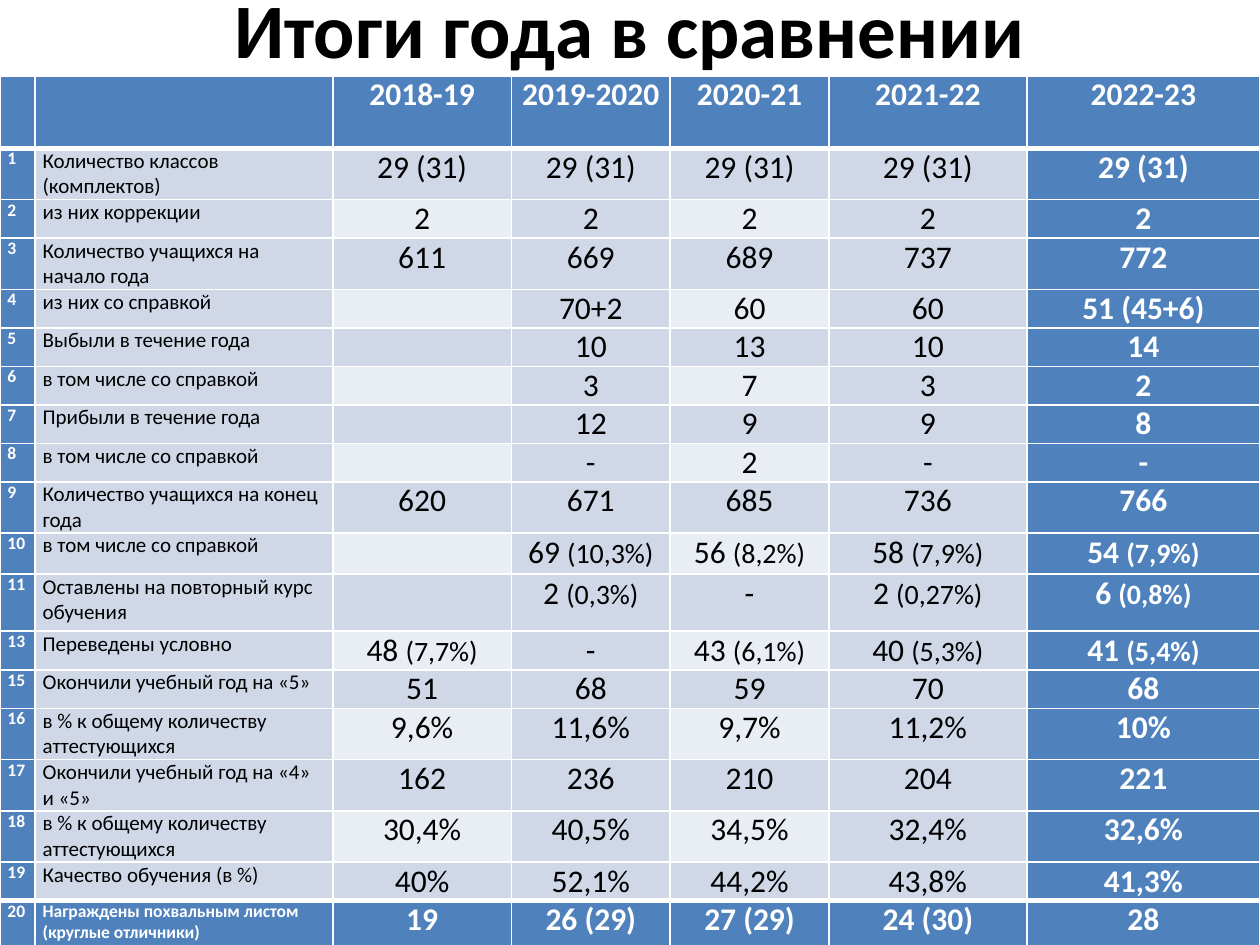
"""Build a slide with a table that compares school results over five years."""
from lxml import etree
from pptx import Presentation
from pptx.dml.color import RGBColor
from pptx.enum.text import MSO_ANCHOR, MSO_AUTO_SIZE, PP_ALIGN
from pptx.oxml.ns import qn
from pptx.util import Cm, Pt

CENTER = PP_ALIGN.CENTER
LEFT = PP_ALIGN.LEFT
MIDDLE = MSO_ANCHOR.MIDDLE
NO_AUTOFIT = MSO_AUTO_SIZE.NONE

FONT = "Calibri"
COLORS = {
    "black": "000000",
    "white": "FFFFFF",
    "accent": "4F81BD",
    "band": "D0D8E8",
    "light": "E9EDF4",
}
COLUMN_WIDTHS = [0.71, 6, 3.6, 3.2, 3.2, 3.99, 4.7]
TITLE = "Итоги года в сравнении"
HEADER_HEIGHT = 1.46
HEADER = ["", "", "2018-19", "2019-2020", "2020-21", "2021-22", "2022-23"]
RESULTS = [
    (0.99, ["1", "Количество классов (комплектов)"] + ["29 (31)"] * 5),
    (0.66, ["2", "из них коррекции"] + ["2"] * 5),
    (0.99, ["3", "Количество учащихся на начало года", "611", "669", "689", "737", "772"]),
    (0.74, ["4", "из них со справкой", "", "70+2", "60", "60", "51 (45+6)"]),
    (0.74, ["5", "Выбыли в течение года", "", "10", "13", "10", "14"]),
    (0.74, ["6", "в том числе со справкой", "", "3", "7", "3", "2"]),
    (0.74, ["7", "Прибыли в течение года", "", "12", "9", "9", "8"]),
    (0.74, ["8", "в том числе со справкой", "", "-", "2", "-", "-"]),
    (0.99, ["9", "Количество учащихся на конец года", "620", "671", "685", "736", "766"]),
    (0.83, ["10", "в том числе со справкой", "",
            "69 (10,3%)", "56 (8,2%)", "58 (7,9%)", "54 (7,9%)"]),
    (1.15, ["11", "Оставлены на повторный курс обучения", "",
            "2 (0,3%)", "-", "2 (0,27%)", "6 (0,8%)"]),
    (0.78, ["13", "Переведены условно",
            "48 (7,7%)", "-", "43 (6,1%)", "40 (5,3%)", "41 (5,4%)"]),
    (0.76, ["15", "Окончили учебный год на «5»", "51", "68", "59", "70", "68"]),
    (0.99, ["16", "в % к общему количеству аттестующихся",
            "9,6%", "11,6%", "9,7%", "11,2%", "10%"]),
    (0.99, ["17", "Окончили учебный год на «4» и «5»", "162", "236", "210", "204", "221"]),
    (0.99, ["18", "в % к общему количеству аттестующихся",
            "30,4%", "40,5%", "34,5%", "32,4%", "32,6%"]),
    (0.74, ["19", "Качество обучения (в %)", "40%", "52,1%", "44,2%", "43,8%", "41,3%"]),
    (1.45, ["20", "Награждены похвальным листом (круглые отличники)",
            "19", "26 (29)", "27 (29)", "24 (30)", "28"]),
]


def color(name):
    """Return the named colour."""
    return RGBColor.from_string(COLORS[name])


def add_span(para, text, *, size, ink="black", bold=False):
    """Add a formatted run of text to a paragraph."""
    span = para.add_run()
    span.text = text
    span.font.name = FONT
    span.font.size = Pt(size)
    span.font.bold = bold
    span.font.color.rgb = color(ink)


def add_title(page):
    """Place and fill the title placeholder."""
    box = page.shapes.title
    box.left, box.top, box.width, box.height = Cm(1.27), Cm(0), Cm(22.86), Cm(1.12)
    frame = box.text_frame
    frame.word_wrap = True
    frame.auto_size = NO_AUTOFIT
    frame.vertical_anchor = MIDDLE
    para = frame.paragraphs[0]
    para.alignment = CENTER
    add_span(para, TITLE, size=44, bold=True)


def set_borders(cell, *, top=1, bottom=1):
    """Draw white borders of the given widths in points."""
    properties = cell._tc.get_or_add_tcPr()
    for side, width in (("L", 1), ("R", 1), ("T", top), ("B", bottom)):
        line = etree.SubElement(properties, qn(f"a:ln{side}"), w=str(Pt(width)))
        fill = etree.SubElement(line, qn("a:solidFill"))
        etree.SubElement(fill, qn("a:srgbClr"), val=COLORS["white"])


def fill_cell(cell, text, *, fill, size, ink, bold, align, margin):
    """Set a cell's fill, margins and text, with percentages in brackets smaller."""
    cell.fill.solid()
    cell.fill.fore_color.rgb = color(fill)
    cell.margin_left = cell.margin_right = Cm(margin)
    cell.margin_top = cell.margin_bottom = 0
    para = cell.text_frame.paragraphs[0]
    para.alignment = align
    if text.endswith("%)") and align == CENTER:
        number, share = text.split(" ")
        add_span(para, number + " ", size=size, ink=ink, bold=bold)
        add_span(para, share, size=16, ink=ink, bold=bold)
    elif text:
        add_span(para, text, size=size, ink=ink, bold=bold)


def cell_format(row, column, last_row):
    """Return the format that belongs to a cell's place in the table."""
    edge_row = row in (0, last_row)
    accented = edge_row or column in (0, len(COLUMN_WIDTHS) - 1)
    if accented:
        fill = "accent"
    elif row % 2 == 0 and column in (2, 4):
        fill = "light"
    else:
        fill = "band"
    label_size = 10 if accented else 12
    is_label = column < 2
    return {
        "fill": fill,
        "size": label_size if is_label else 18,
        "ink": "white" if accented else "black",
        "bold": accented,
        "align": LEFT if is_label else CENTER,
        "margin": 0.15 if is_label else 0.18,
    }


def add_results_table(page):
    """Add the table of yearly results."""
    rows = [(HEADER_HEIGHT, HEADER)] + RESULTS
    last_row = len(rows) - 1
    total_height = sum(height for height, _ in rows)
    table = page.shapes.add_table(
        len(rows), len(COLUMN_WIDTHS),
        Cm(0), Cm(1.53), Cm(sum(COLUMN_WIDTHS)), Cm(total_height),
    ).table
    for column, width in zip(table.columns, COLUMN_WIDTHS):
        column.width = Cm(width)
    for row, (height, texts) in enumerate(rows):
        table.rows[row].height = Cm(height)
        for column, text in enumerate(texts):
            cell = table.cell(row, column)
            set_borders(
                cell,
                top=3 if row in (1, last_row) else 1,
                bottom=3 if row in (0, last_row - 1) else 1,
            )
            fill_cell(cell, text, **cell_format(row, column, last_row))


def main():
    """Build and save the deck."""
    deck = Presentation()
    deck.slide_width, deck.slide_height = Cm(25.4), Cm(19.05)
    page = deck.slides.add_slide(deck.slide_layouts.get_by_name("Title Only"))
    add_title(page)
    add_results_table(page)
    deck.save("out.pptx")


if __name__ == "__main__":
    main()
